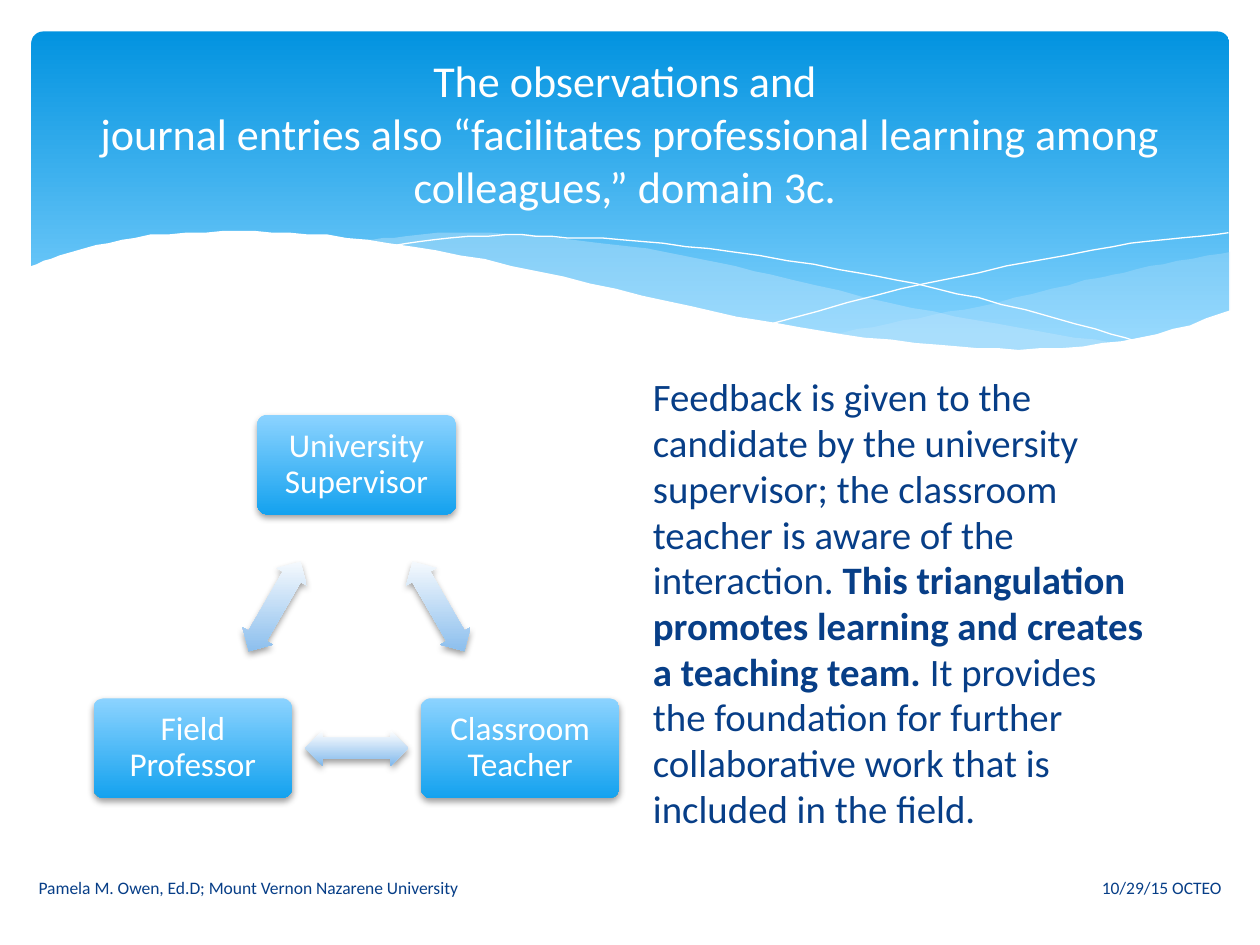
import math
from lxml import etree
from pptx import Presentation
from pptx.dml.color import RGBColor
from pptx.enum import shapes, text
from pptx.oxml.ns import qn
from pptx.util import Pt

SHAPE, ALIGN, ANCHOR = shapes.MSO_SHAPE, text.PP_ALIGN, text.MSO_ANCHOR
COLORS = {
    "white": "FFFFFF", "navy": "073E87", "mist": "C6E7FC", "black": "000000",
    "deep": "0293E0", "sky": "83D3FE",
    "box top": "8CD3FF", "box end": "14A2EF", "arrow end": "82B9EC",
}

# Content
ROLES = ["University Supervisor", "Classroom Teacher", "Field Professor"]
# left, top, width, height, runs (text, bold), format
TEXTS = [
    (36, 26.5, 648, 99,
     [("The observations and \vjournal entries also “facilitates professional "
       "learning among colleagues,” domain 3c. ", False)],
     {"size": 25.2, "color": "white", "align": ALIGN.CENTER, "anchor": ANCHOR.MIDDLE}),
    (366, 211, 301, 271.5,
     [("Feedback is given to the candidate by the university supervisor; the "
       "classroom teacher is aware of the interaction. ", False),
      ("This triangulation promotes learning and creates a teaching team. ", True),
      ("It provides the foundation for further collaborative work that is "
       "included in the field.", False)],
     {"size": 22.2, "before": 4.4, "spacing": 0.98}),
    (407, 492.5, 298, 29, [("10/29/15 OCTEO", False)],
     {"size": 10, "align": ALIGN.RIGHT, "anchor": ANCHOR.MIDDLE}),
    (15, 492.5, 298, 29,
     [("Pamela M. Owen, Ed.D; Mount Vernon Nazarene University", False)],
     {"size": 10, "anchor": ANCHOR.MIDDLE}),
]
# Curves through these points; a closed one joins its edges in turn
RIBBONS = [
    ("mist", 29, [
        [(703, 144), (673, 149), (642, 155.5), (620, 160.5), (580, 170.5),
         (542, 178.5), (508, 185), (476, 191)],
        [(476, 191), (508, 195), (536, 198), (562, 199.5), (586, 200),
         (615, 199), (640, 196), (663, 191), (683, 185), (703, 178)]]),
    ("mist", 40, [
        [(643, 196.5), (603, 191), (558, 183), (508, 173), (453, 160),
         (410, 150), (370, 142.5), (335, 137.5), (302, 134.5), (260, 133),
         (225, 135.5), (206, 137.5)],
        [(206, 137.5), (246, 143.5), (291, 152), (323, 160), (382, 173),
         (433, 183.5), (479, 191.5), (520, 197), (557, 199.5), (589, 200),
         (617, 199.5), (643, 196.5)]]),
]
STRANDS = [
    [(222.5, 140.5), (248, 137), (289, 134.5), (324, 135.5), (367, 138),
     (419, 144), (479, 153.5), (523, 162.5), (572, 173.5), (626, 188), (653, 196)],
    [(441, 185), (500, 169), (559, 155.5), (623.5, 143), (665, 137), (702, 133)],
]
WAVE = ("white", 100, [
    [(703.5, 177), (670, 188.5), (630, 196.5), (582, 199.5), (536, 197),
     (481, 191), (434, 183), (381, 172), (322, 158.5), (263, 145.5),
     (210, 137), (166, 133), (127, 132.5), (86, 134.5), (55, 140.5),
     (29, 147.5), (16.5, 153.5)],
    [(16.5, 237), (703.5, 237)]])

deck = Presentation()
deck.slide_width, deck.slide_height = Pt(720), Pt(540)
slide = deck.slides.add_slide(deck.slide_layouts[6])


def rgb(name):
    return RGBColor.from_string(COLORS[name])


def curve(points):
    """Catmull-Rom curve through the points."""
    if len(points) < 3:
        return points
    ends = [points[0], *points, points[-1]]
    out = [points[0]]
    for a, b, c, d in zip(ends, ends[1:], ends[2:], ends[3:]):
        for t in (0.25, 0.5, 0.75, 1):
            out.append(tuple(
                (2 * q + (r - p) * t + (2 * p - 5 * q + 4 * r - s) * t ** 2
                 + (3 * q - p - 3 * r + s) * t ** 3) / 2
                for p, q, r, s in zip(a, b, c, d)))
    return out


def outline(edges, close):
    points = [point for edge in edges for point in curve(edge)]
    pen = slide.shapes.build_freeform(*points[0], scale=Pt(1))
    pen.add_line_segments(points[1:], close=close)
    shape = pen.convert_to_shape()
    shape.shadow.inherit = False
    return shape


def ribbon(color, alpha, edges):
    shape = outline(edges, True)
    shape.fill.solid()
    shape.fill.fore_color.rgb = rgb(color)
    shape.line.fill.background()
    if alpha < 100:
        tint = shape._element.spPr.find(".//" + qn("a:srgbClr"))
        etree.SubElement(tint, qn("a:alpha"), val=str(alpha * 1000))


def block(kind, x, y, w, h, adjust, stops, shade=True):
    shape = slide.shapes.add_shape(kind, Pt(x), Pt(y), Pt(w), Pt(h))
    for i, value in enumerate(adjust):
        shape.adjustments[i] = value
    shape.line.fill.background()
    shape.fill.gradient()
    shape.fill.gradient_angle = 270
    for stop, (place, color) in zip(shape.fill.gradient_stops, stops):
        stop.position, stop.color.rgb = place, rgb(color)
    shape.shadow.inherit = False
    props = shape._element.spPr
    props.find(qn("a:gradFill")).set("rotWithShape", "0")
    if shade:
        drop = etree.SubElement(
            props.find(qn("a:effectLst")), qn("a:outerShdw"), blurRad=str(Pt(4)),
            dist=str(Pt(2)), dir="5400000", rotWithShape="0")
        tint = etree.SubElement(drop, qn("a:srgbClr"), val=COLORS["black"])
        etree.SubElement(tint, qn("a:alpha"), val="38000")
    return shape


def write(shape, runs, size, color="navy", align=ALIGN.LEFT, anchor=ANCHOR.TOP,
          before=0, spacing=1.0):
    frame = shape.text_frame
    frame.word_wrap, frame.vertical_anchor = True, anchor
    para = frame.paragraphs[0]
    form = {"alignment": align, "space_before": Pt(before), "line_spacing": spacing}
    for key, value in form.items():
        setattr(para, key, value)
    for words, bold in runs:
        for i, part in enumerate(words.split("\v")):
            if i:
                para.add_line_break()
            run = para.add_run()
            run.text = part
            for key, value in {"name": "Calibri", "size": Pt(size), "bold": bold}.items():
                setattr(run.font, key, value)
            run.font.color.rgb = rgb(color)
    return frame


# Banner with ribbons, strands and the white wave
block(SHAPE.ROUNDED_RECTANGLE, 18, 18, 684.5, 194.5, [0.034],
      [(0, "deep"), (0.9, "sky")], shade=False)
for item in RIBBONS:
    ribbon(*item)
for strand in STRANDS:
    shape = outline([strand], False)
    shape.fill.background()
    shape.line.color.rgb = rgb("white")
    shape.line.width = Pt(0)
ribbon(*WAVE)

# Triangle of roles, clockwise from the top
MID_X, MID_Y, RADIUS = 203.75, 373.5, 108
BOX_W, BOX_H, ARROW_W, ARROW_H = 113.5, 57, 59, 20
STEP = 360 / len(ROLES)
spots = [(MID_X + RADIUS * math.sin(math.radians(STEP * i)),
          MID_Y - RADIUS * math.cos(math.radians(STEP * i)))
         for i in range(len(ROLES))]
for i, (role, (x, y)) in enumerate(zip(ROLES, spots)):
    box = block(SHAPE.ROUNDED_RECTANGLE, x - BOX_W / 2, y - BOX_H / 2, BOX_W, BOX_H,
                [0.1], [(0, "box top"), (1, "box end")])
    write(box, [(role, False)], 19, "white", ALIGN.CENTER, ANCHOR.MIDDLE, spacing=0.9)
    # Arrow halfway to the next role
    nx, ny = spots[(i + 1) % len(spots)]
    arrow = block(SHAPE.LEFT_RIGHT_ARROW, (x + nx - ARROW_W) / 2, (y + ny - ARROW_H) / 2,
                  ARROW_W, ARROW_H, [0.6, 0.5], [(0, "white"), (1, "arrow end")])
    arrow.rotation = STEP / 2 + STEP * i

# Title, body and footers
for x, y, w, h, runs, form in TEXTS:
    write(slide.shapes.add_textbox(Pt(x), Pt(y), Pt(w), Pt(h)), runs, **form)

deck.save("out.pptx")
